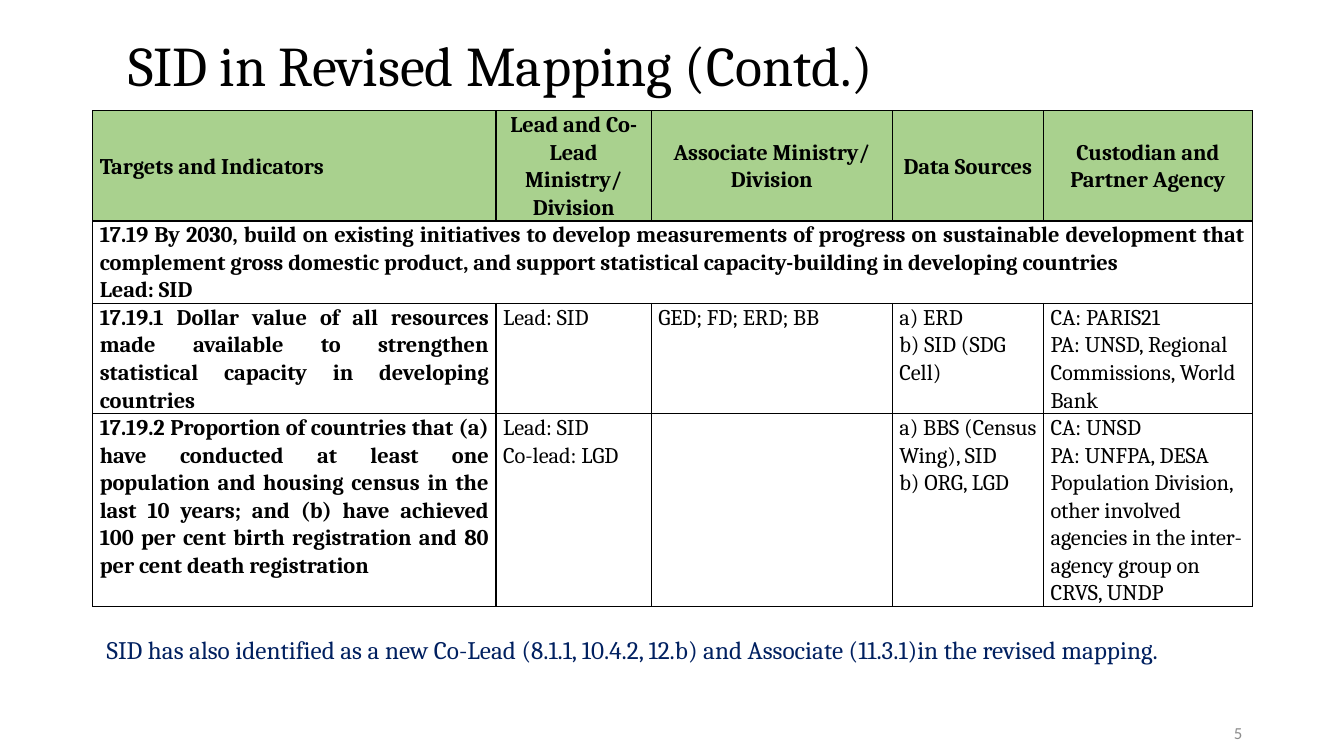
"""Build the slide on SID in the revised mapping, with its table of indicators."""
from pptx import Presentation
from pptx.dml.color import RGBColor
from pptx.enum import text
from pptx.oxml import parse_xml
from pptx.oxml.ns import nsdecls
from pptx.util import Inches, Pt

BLACK = RGBColor(0x00, 0x00, 0x00)
GREEN = RGBColor(0xA9, 0xD1, 0x8E)
NAVY = RGBColor(0x00, 0x20, 0x60)
GREY = RGBColor(0x8C, 0x8C, 0x8C)
LEFT, CENTER, RIGHT, JUSTIFY = (text.PP_ALIGN.LEFT, text.PP_ALIGN.CENTER,
                                text.PP_ALIGN.RIGHT, text.PP_ALIGN.JUSTIFY)
TOP, MIDDLE = text.MSO_ANCHOR.TOP, text.MSO_ANCHOR.MIDDLE

COLUMNS = [4, 1.54, 2.39, 1.5, 2.07]
HEIGHTS = [1.09, 0.82, 1.09, 1.9]
ROWS = [
    ["Targets and Indicators", "Lead and Co-Lead Ministry/\nDivision",
     "Associate Ministry/\nDivision", "Data Sources", "Custodian and Partner Agency"],
    ["17.19 By 2030, build on existing initiatives to develop measurements of progress "
     "on sustainable development that complement gross domestic product, and support "
     "statistical capacity-building in developing countries\nLead: SID"],
    ["17.19.1 Dollar value of all resources made available to strengthen statistical "
     "capacity in developing countries",
     "Lead: SID", "GED; FD; ERD; BB", "a) ERD\vb) SID (SDG Cell)",
     "CA: PARIS21\nPA: UNSD, Regional Commissions, World Bank"],
    ["17.19.2 Proportion of countries that (a) have conducted at least one population "
     "and housing census in the last 10 years; and (b) have achieved 100 per cent birth "
     "registration and 80 per cent death registration",
     "Lead: SID\nCo-lead: LGD", "", "a) BBS (Census Wing), SID\vb) ORG, LGD",
     "CA: UNSD\nPA: UNFPA, DESA Population Division, other involved agencies in the "
     "inter-agency group on CRVS, UNDP"],
]


def write(tf, content, size, color, align=LEFT, spacing=1.0, name="Cambria", bold=False):
    tf.text = content
    for p in tf.paragraphs:
        p.alignment, p.line_spacing = align, spacing
        p.font.color.rgb = color
        for r in p.runs:
            r.font.color.rgb = color
            for key, value in {"size": Pt(size), "name": name, "bold": bold}.items():
                setattr(r.font, key, value)


prs = Presentation()
prs.slide_width, prs.slide_height = Inches(13.33), Inches(7.5)
slide = prs.slides.add_slide(prs.slide_layouts[5])

title = slide.shapes.title
box = {"left": 1.17, "top": 0.4, "width": 8.09, "height": 0.56}
for key, value in box.items():
    setattr(title, key, Inches(value))
title.text_frame.auto_size = text.MSO_AUTO_SIZE.NONE
title.text_frame.vertical_anchor = MIDDLE
write(title.text_frame, "SID in Revised Mapping (Contd.)", 40, BLACK, spacing=0.9)

frame = slide.shapes.add_table(len(ROWS), len(COLUMNS), Inches(0.92), Inches(1.1),
                               Inches(sum(COLUMNS)), Inches(sum(HEIGHTS)))
table = frame.table
table.first_row = table.horz_banding = False
for column, width in zip(table.columns, COLUMNS):
    column.width = Inches(width)
for row, height in zip(table.rows, HEIGHTS):
    row.height = Inches(height)
table.cell(1, 0).merge(table.cell(1, len(COLUMNS) - 1))

for i, row in enumerate(table.rows):
    header = i == 0
    for j, cell in enumerate(row.cells):
        tcPr = cell._tc.get_or_add_tcPr()
        for side in ("lnL", "lnR", "lnT", "lnB"):
            tcPr.append(parse_xml(
                f'<a:{side} {nsdecls("a")} w="12700"><a:solidFill>'
                f'<a:srgbClr val="{BLACK}"/></a:solidFill></a:{side}>'))
        if header:
            cell.fill.solid()
            cell.fill.fore_color.rgb = GREEN
        else:
            cell.fill.background()
        layout = {"margin_left": Inches(0.07), "margin_right": Inches(0.07),
                  "margin_top": 0, "margin_bottom": 0,
                  "vertical_anchor": MIDDLE if header else TOP}
        for key, value in layout.items():
            setattr(cell, key, value)
        if j < len(ROWS[i]) and ROWS[i][j]:
            if header:
                align = CENTER if j else LEFT
            else:
                align = LEFT if j else JUSTIFY
            write(cell.text_frame, ROWS[i][j], 16, BLACK, align, 1.07,
                  bold=header or j == 0)

notes = [
    ((0.96, 6.24, 11.5, 0.4), TOP,
     "SID has also identified as a new Co-Lead (8.1.1, 10.4.2, 12.b) and Associate "
     "(11.3.1)in the revised mapping.", 18, NAVY, LEFT, "Cambria"),
    ((9.42, 7.07, 3, 0.4), MIDDLE, "5", 12, GREY, RIGHT, "Calibri"),
]
for place, anchor, content, size, color, align, name in notes:
    tf = slide.shapes.add_textbox(*map(Inches, place)).text_frame
    tf.word_wrap = True
    tf.vertical_anchor = anchor
    write(tf, content, size, color, align, name=name)

prs.save("out.pptx")
